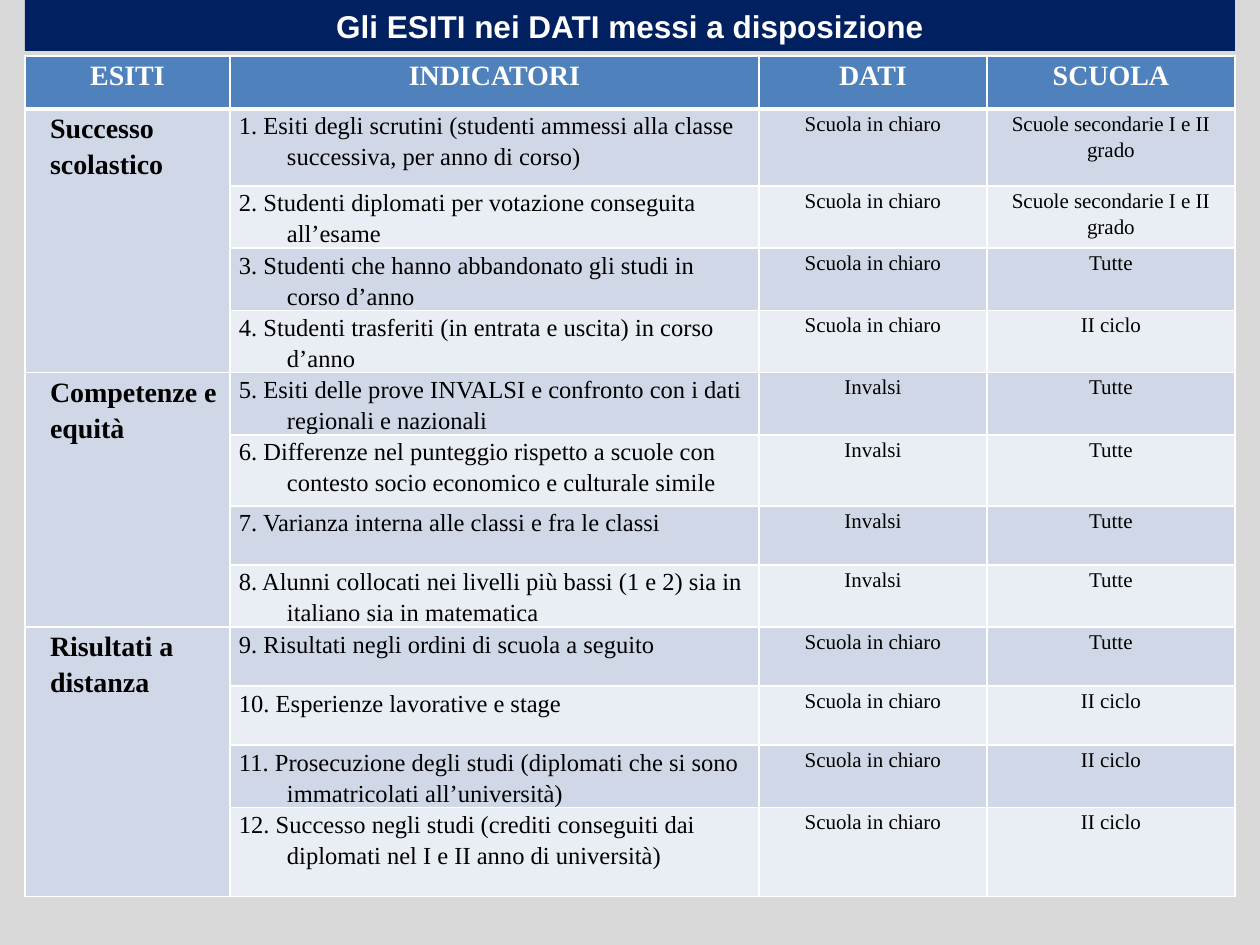
from dataclasses import dataclass

from lxml import etree
from pptx import Presentation
from pptx.dml.color import RGBColor
from pptx.enum.shapes import MSO_SHAPE
from pptx.enum.text import MSO_ANCHOR, MSO_AUTO_SIZE, PP_ALIGN
from pptx.oxml.ns import qn
from pptx.util import Pt

RECTANGLE = MSO_SHAPE.RECTANGLE
TOP, MIDDLE = MSO_ANCHOR.TOP, MSO_ANCHOR.MIDDLE
LEFT, CENTER = PP_ALIGN.LEFT, PP_ALIGN.CENTER
GROW = MSO_AUTO_SIZE.SHAPE_TO_FIT_TEXT


@dataclass(frozen=True)
class Theme:
    page: str = "D9D9D9"
    banner: str = "002060"
    header: str = "4F81BD"
    bands: tuple = ("D0D8E8", "E9EDF4")
    light: str = "FFFFFF"
    dark: str = "000000"
    title_font: str = "Arial"
    table_font: str = "Times New Roman"
    title_size: int = 18
    heading_size: int = 16
    indicator_size: int = 14
    detail_size: int = 12


THEME = Theme()
HEADINGS = ["ESITI", "INDICATORI", "DATI", "SCUOLA"]
OPEN_DATA = "Scuola in chiaro"
TESTS = "Invalsi"
SECONDARY = "Scuole secondarie I e II grado"
ALL = "Tutte"
UPPER = "II ciclo"
OUTCOMES = {
    "Successo scolastico": [
        ("Esiti degli scrutini (studenti ammessi alla classe successiva, per anno di corso)",
         OPEN_DATA, SECONDARY),
        ("Studenti diplomati per votazione conseguita all’esame", OPEN_DATA, SECONDARY),
        ("Studenti che hanno abbandonato gli studi in corso d’anno", OPEN_DATA, ALL),
        ("Studenti trasferiti (in entrata e uscita) in corso d’anno", OPEN_DATA, UPPER),
    ],
    "Competenze e equità": [
        ("Esiti delle prove INVALSI e confronto con i dati regionali e nazionali", TESTS, ALL),
        ("Differenze nel punteggio rispetto a scuole con contesto socio economico "
         "e culturale simile", TESTS, ALL),
        ("Varianza interna alle classi e fra le classi", TESTS, ALL),
        ("Alunni collocati nei livelli più bassi (1 e 2) sia in italiano sia in matematica",
         TESTS, ALL),
    ],
    "Risultati a distanza": [
        ("Risultati negli ordini di scuola a seguito", OPEN_DATA, ALL),
        ("Esperienze lavorative e stage", OPEN_DATA, UPPER),
        ("Prosecuzione degli studi (diplomati che si sono immatricolati all’università)",
         OPEN_DATA, UPPER),
        ("Successo negli studi (crediti conseguiti dai diplomati nel I e II anno di università)",
         OPEN_DATA, UPPER),
    ],
}
COLUMN_WIDTHS = [205, 529, 228, 248]
ROW_HEIGHT = 59
SPECIAL_HEIGHTS = {0: 53, 1: 77, 6: 71, 12: 89}
ROW_COUNT = 13


def px(length):
    return round(length * 914400 / 126)


def rgb(color):
    return RGBColor.from_string(color)


def write_text(frame, text, *, size, color=THEME.dark, font=THEME.table_font, bold=False,
               align=LEFT, spacing=1.15, margin=0, indent=0):
    frame.word_wrap = True
    para = frame.paragraphs[0]
    para.alignment = align
    para.line_spacing = spacing
    properties = para._p.get_or_add_pPr()
    properties.set("marL", str(px(margin)))
    properties.set("indent", str(px(indent)))
    span = para.add_run()
    span.text = text
    span.font.size = Pt(size)
    span.font.name = font
    span.font.bold = bold
    span.font.color.rgb = rgb(color)


def style_cell(cell, color, top=1, bottom=1):
    """Set margins, white borders (widths in points) and fill."""
    cell.margin_left = cell.margin_right = px(9)
    cell.margin_top = cell.margin_bottom = 0
    cell.vertical_anchor = TOP
    properties = cell._tc.get_or_add_tcPr()
    for side, width in {"L": 1, "R": 1, "T": top, "B": bottom}.items():
        line = etree.SubElement(properties, qn(f"a:ln{side}"), w=str(Pt(width)))
        fill = etree.SubElement(line, qn("a:solidFill"))
        etree.SubElement(fill, qn("a:srgbClr"), val=THEME.light)
    cell.fill.solid()
    cell.fill.fore_color.rgb = rgb(color)


def add_banner(page, left, top, width, height):
    box = page.shapes.add_shape(RECTANGLE, px(left), px(top), px(width), px(height))
    box.shadow.inherit = False
    box.fill.solid()
    box.fill.fore_color.rgb = rgb(THEME.banner)
    box.line.fill.background()
    frame = box.text_frame
    frame.auto_size = GROW
    frame.vertical_anchor = MIDDLE
    write_text(frame, "Gli ESITI nei DATI messi a disposizione", size=THEME.title_size,
               color=THEME.light, font=THEME.title_font, bold=True, align=CENTER, spacing=1.0)


def add_outcome_table(page, left, top):
    heights = [SPECIAL_HEIGHTS.get(row, ROW_HEIGHT) for row in range(ROW_COUNT)]
    table = page.shapes.add_table(ROW_COUNT, len(HEADINGS), px(left), px(top),
                                  px(sum(COLUMN_WIDTHS)), px(sum(heights))).table
    for column, width in zip(table.columns, COLUMN_WIDTHS):
        column.width = px(width)
    for row, height in zip(table.rows, heights):
        row.height = px(height)

    for column, heading in enumerate(HEADINGS):
        cell = table.cell(0, column)
        style_cell(cell, THEME.header, bottom=3)
        write_text(cell.text_frame, heading, size=THEME.heading_size, color=THEME.light,
                   bold=True, align=CENTER)

    number = 0
    for outcome, indicators in OUTCOMES.items():
        first = table.cell(number + 1, 0)
        first.merge(table.cell(number + len(indicators), 0))
        write_text(first.text_frame, outcome, size=THEME.heading_size, bold=True, margin=16)
        for indicator, *details in indicators:
            number += 1
            band = THEME.bands[(number - 1) % 2]
            for column in range(len(HEADINGS)):
                style_cell(table.cell(number, column), band if column else THEME.bands[0],
                           top=3 if number == 1 else 1)
            write_text(table.cell(number, 1).text_frame, f"{number}. {indicator}",
                       size=THEME.indicator_size, margin=48, indent=-48)
            for column, detail in enumerate(details, start=2):
                write_text(table.cell(number, column).text_frame, detail,
                           size=THEME.detail_size, align=CENTER)


def main():
    deck = Presentation()
    deck.slide_width, deck.slide_height = px(1260), px(945)
    page = deck.slides.add_slide(deck.slide_layouts[6])
    page.background.fill.solid()
    page.background.fill.fore_color.rgb = rgb(THEME.page)
    add_outcome_table(page, 25, 56)
    add_banner(page, 25, 0, sum(COLUMN_WIDTHS), 51)
    deck.save("out.pptx")


if __name__ == "__main__":
    main()
